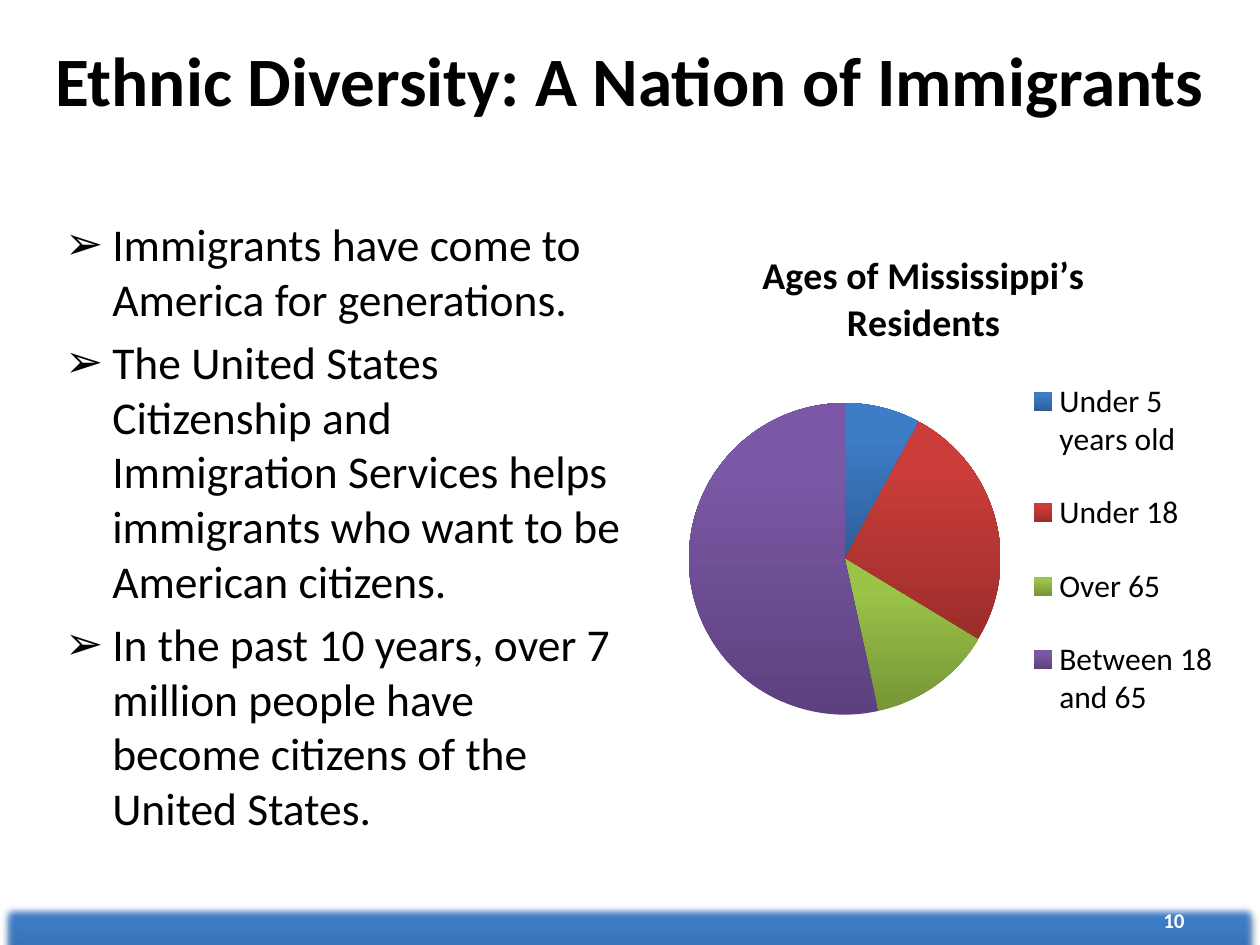
"""Build a slide on immigration with a bulleted list and a pie chart of ages."""
import dataclasses

import lxml.etree
import pptx
import pptx.chart.data
import pptx.dml.color
import pptx.enum.chart
import pptx.enum.shapes
import pptx.enum.text
import pptx.oxml
import pptx.oxml.ns
import pptx.util

Cm = pptx.util.Cm
Pt = pptx.util.Pt
qn = pptx.oxml.ns.qn


@dataclasses.dataclass(frozen=True)
class Theme:
    font: str = "Calibri"
    text: str = "000000"
    light: str = "FFFFFF"
    title: float = 39.6
    body: float = 26
    chart_title: float = 21.6
    legend: float = 18
    number: float = 12
    bar: tuple = ("2F5F99", "3D7CC7")
    slices: tuple = (
        ("2F5F99", "3D7CC7"),
        ("9B2D2A", "CB3D3A"),
        ("769535", "9BC348"),
        ("5D417E", "7B58A6"),
    )


THEME = Theme()
BULLETS = (
    "Immigrants have come to America for generations.",
    "The United States Citizenship and Immigration Services helps immigrants "
    "who want to be American citizens.",
    "In the past 10 years, over 7 million people have become citizens of the United States.",
)
AGES = {"Under 5 years old": 8, "Under 18": 26, "Over 65": 13, "Between 18 and 65": 54}


def place(sp, left, top, width, height):
    sp.left, sp.top, sp.width, sp.height = Cm(left), Cm(top), Cm(width), Cm(height)


def style_font(font, size, color=THEME.text, bold=False):
    font.name, font.size, font.bold = THEME.font, Pt(size), bold
    font.color.rgb = pptx.dml.color.RGBColor.from_string(color)


def add_run(p, text, size, color=THEME.text, bold=False):
    r = p.add_run()
    r.text = text
    style_font(r.font, size, color, bold)


def shade(fill, colors):
    """Fill with a vertical gradient, given from bottom to top."""
    fill.gradient()
    fill.gradient_angle = 90
    for stop, color, position in zip(fill.gradient_stops, colors, (0, 0.8)):
        stop.color.rgb = pptx.dml.color.RGBColor.from_string(color)
        stop.position = position


def add_bar(s):
    sp = s.shapes.add_shape(pptx.enum.shapes.MSO_SHAPE.RECTANGLE, 0, Cm(18.2), Cm(25.4), Cm(1.9))
    shade(sp.fill, THEME.bar)
    sp.line.fill.background()
    sp.shadow.inherit = False
    effects = sp._element.spPr.find(qn("a:effectLst"))
    shadow = lxml.etree.SubElement(
        effects, qn("a:outerShdw"), blurRad="40000", dist="23000", dir="5400000", rotWithShape="0")
    color = lxml.etree.SubElement(shadow, qn("a:srgbClr"), val="000000")
    lxml.etree.SubElement(color, qn("a:alpha"), val="35000")
    lxml.etree.SubElement(effects, qn("a:softEdge"), rad="63500")


def add_number(s, text):
    sp = s.shapes.add_textbox(Cm(18.2), Cm(18.03), Cm(5.93), Cm(1.02))
    tf = sp.text_frame
    tf.word_wrap = True
    tf.vertical_anchor = pptx.enum.text.MSO_ANCHOR.MIDDLE
    p = tf.paragraphs[0]
    p.alignment = pptx.enum.text.PP_ALIGN.RIGHT
    add_run(p, text, THEME.number, THEME.light, True)


def fill_title(sp, text):
    place(sp, 0, 0, 25.4, 3.18)
    tf = sp.text_frame
    tf.auto_size = pptx.enum.text.MSO_AUTO_SIZE.NONE
    tf.vertical_anchor = pptx.enum.text.MSO_ANCHOR.MIDDLE
    p = tf.paragraphs[0]
    p.alignment = pptx.enum.text.PP_ALIGN.CENTER
    add_run(p, text, THEME.title, bold=True)


def add_bullet(p, char, indent):
    pPr = p._p.get_or_add_pPr()
    pPr.set("marL", str(indent))
    pPr.set("indent", str(-indent))
    lxml.etree.SubElement(pPr, qn("a:buFont"), typeface="Arial")
    lxml.etree.SubElement(pPr, qn("a:buChar"), char=char)


def fill_body(sp, items):
    place(sp, 1.06, 4.23, 11.85, 13.97)
    tf = sp.text_frame
    tf.auto_size = pptx.enum.text.MSO_AUTO_SIZE.NONE
    for i, text in enumerate(items):
        p = tf.add_paragraph() if i else tf.paragraphs[0]
        add_bullet(p, "➢", Cm(0.95))
        p.space_before = Pt(0.2 * THEME.body if i else 0)
        add_run(p, text, THEME.body)


def set_layout(parent, index, **fractions):
    """Place a chart part by fractions of the chart's size."""
    for old in parent.findall(qn("c:layout")):
        parent.remove(old)
    layout = lxml.etree.Element(qn("c:layout"))
    manual = lxml.etree.SubElement(layout, qn("c:manualLayout"))
    if parent.tag == qn("c:plotArea"):
        lxml.etree.SubElement(manual, qn("c:layoutTarget"), val="inner")
    for axis in "xy":
        lxml.etree.SubElement(manual, qn(f"c:{axis}Mode"), val="edge")
    for name, value in fractions.items():
        lxml.etree.SubElement(manual, qn(f"c:{name}"), val=str(value))
    parent.insert(index, layout)


def add_pie(s, title, values):
    data = pptx.chart.data.CategoryChartData()
    data.categories = list(values)
    data.add_series("Series 1", list(values.values()))
    chart = s.shapes.add_chart(
        pptx.enum.chart.XL_CHART_TYPE.PIE, Cm(13.55), Cm(3.6), Cm(11.22), Cm(12.57), data).chart
    style_font(chart.font, THEME.legend)

    chart.has_title = True
    add_run(chart.chart_title.text_frame.paragraphs[0], title, THEME.chart_title, bold=True)
    set_layout(chart.chart_title._element, 1, x=0.15, y=0.1)

    chart.has_legend = True
    chart.legend.position = pptx.enum.chart.XL_LEGEND_POSITION.RIGHT
    chart.legend.include_in_layout = False
    style_font(chart.legend.font, THEME.legend)
    set_layout(chart.legend._element, 1, x=0.63, y=0.27, w=0.36, h=0.65)

    plot = chart.plots[0]
    plot.vary_by_categories = True
    for i, colors in enumerate(THEME.slices):
        shade(plot.series[0].points[i].format.fill, colors)
    set_layout(chart._chartSpace.chart.plotArea, 0, x=0.03, y=0.36, w=0.56, h=0.5)


def main():
    prs = pptx.Presentation()
    prs.slide_width, prs.slide_height = Cm(25.4), Cm(19.05)
    s = prs.slides.add_slide(prs.slide_layouts[1])
    add_bar(s)
    add_number(s, "10")
    fill_body(s.placeholders[1], BULLETS)
    fill_title(s.shapes.title, "Ethnic Diversity: A Nation of Immigrants")
    add_pie(s, "Ages of Mississippi’s Residents", AGES)
    prs.save("out.pptx")


if __name__ == "__main__":
    main()
